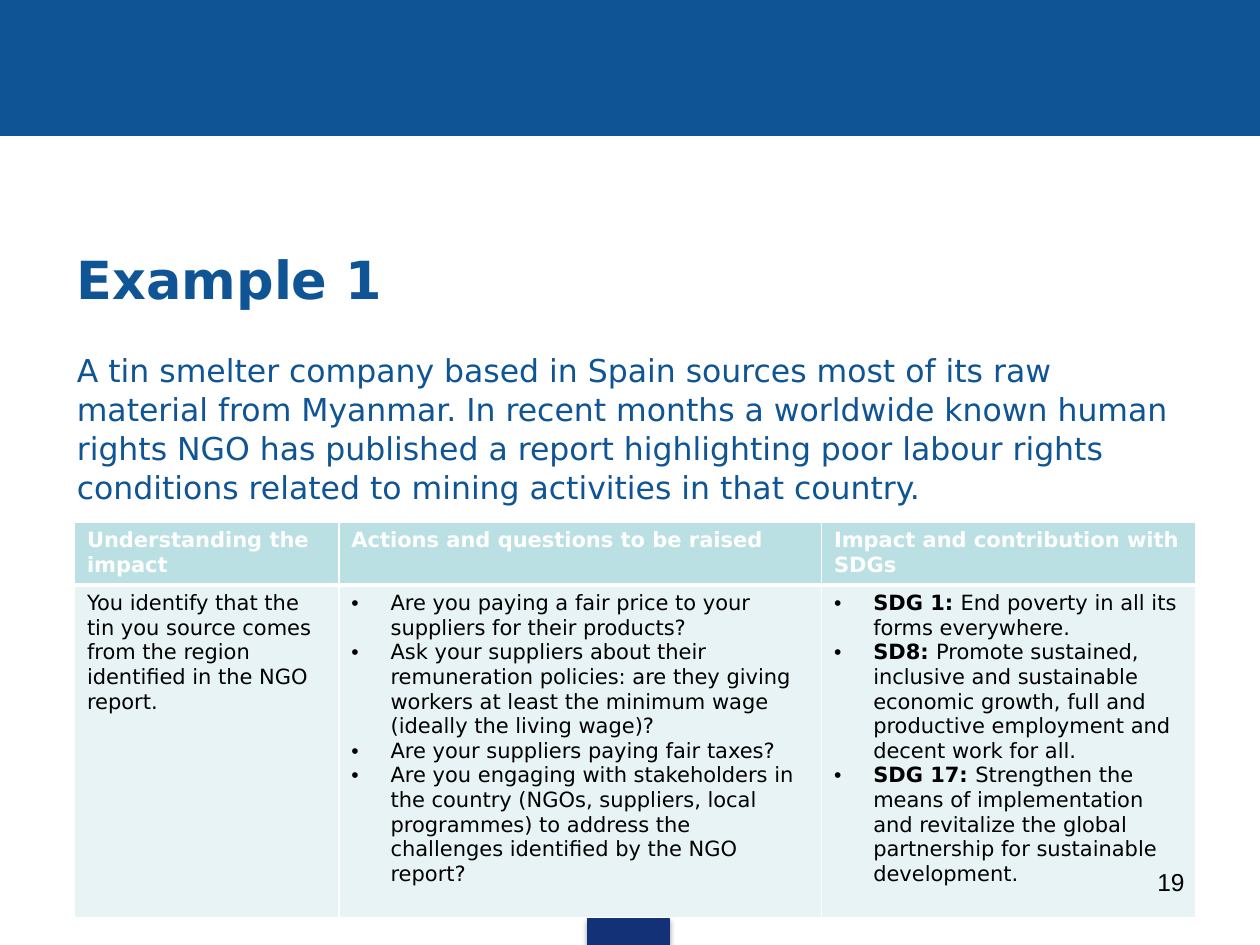
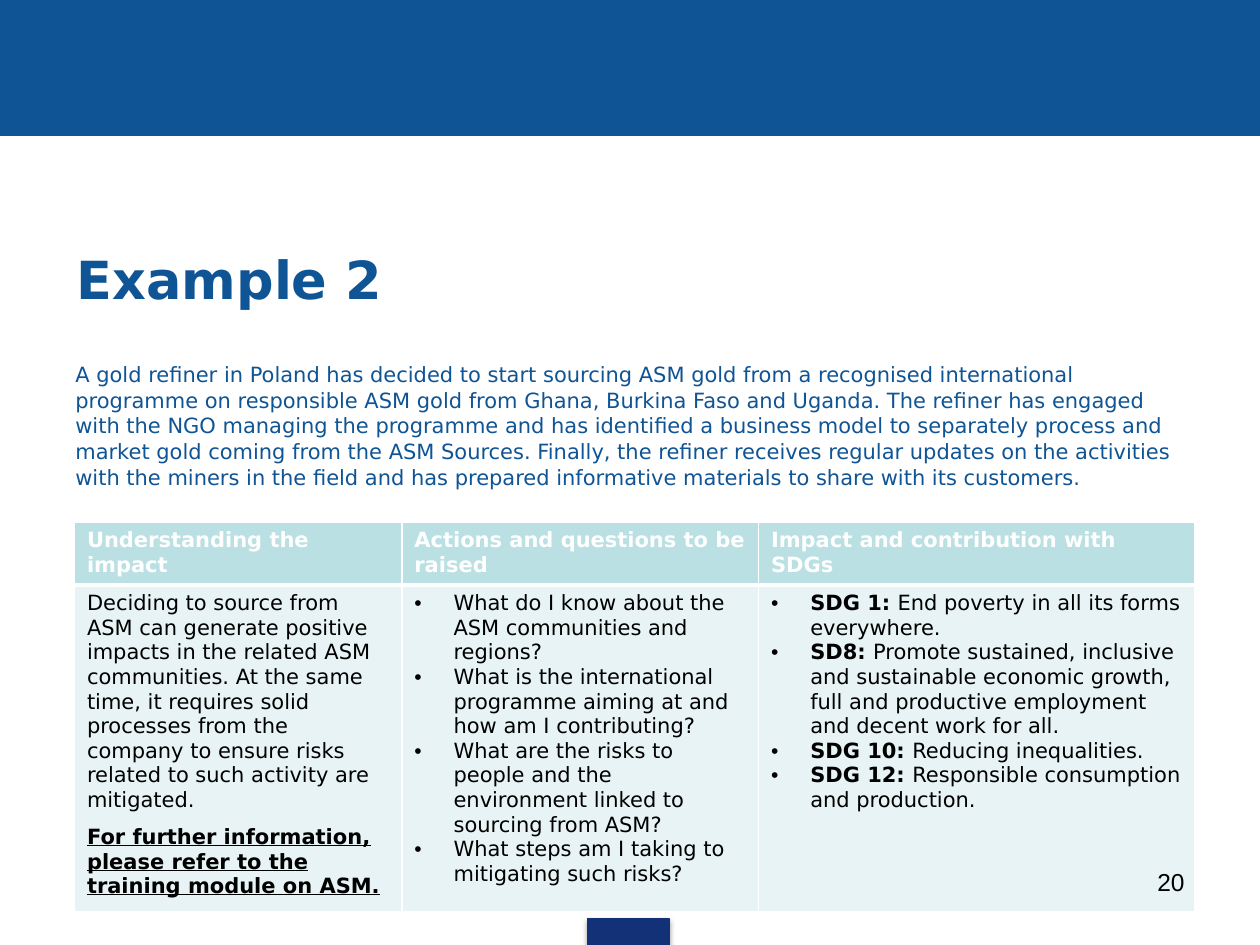
from dataclasses import dataclass

from lxml import etree
from pptx import Presentation
from pptx.dml.color import RGBColor
from pptx.enum.shapes import MSO_SHAPE
from pptx.enum.text import MSO_ANCHOR, PP_ALIGN
from pptx.oxml.ns import qn
from pptx.util import Cm, Pt

RECTANGLE = MSO_SHAPE.RECTANGLE
MIDDLE, TOP = MSO_ANCHOR.MIDDLE, MSO_ANCHOR.TOP
LEFT, RIGHT = PP_ALIGN.LEFT, PP_ALIGN.RIGHT


@dataclass(frozen=True)
class Theme:
    blue: str = "0F5494"
    navy: str = "133176"
    header_fill: str = "BBE0E3"
    body_fill: str = "E7F3F4"
    white: str = "FFFFFF"
    black: str = "000000"
    font: str = "DejaVu Sans"
    number_font: str = "Arial"
    title_size: float = 30
    number_size: float = 14
    table_size: float = 12
    thin_border: float = 1
    thick_border: float = 3


@dataclass
class Example:
    title: str
    page: str
    story: str
    story_size: float
    story_box: tuple
    column_widths: tuple
    answer_height: float
    impact: str
    further_reading: str
    questions: list
    goals: list


THEME = Theme()
SLIDE_WIDTH, SLIDE_HEIGHT = 25.4, 19.05
BAND_BOX = (0, 0, SLIDE_WIDTH, 2.74)
TAB_BOX = (11.84, 18.52, 1.65, 0.56)
TITLE_BOX = (1.3, 4.32, 22.86, 2.59)
NUMBER_BOX = (18.21, 17.35, 5.92, 1.31)
TABLE_LEFT, TABLE_TOP, HEADER_HEIGHT = 1.5, 10.52, 1.23
BULLET_INDENT = 0.79
HEADERS = (
    "Understanding the impact",
    "Actions and questions to be raised",
    "Impact and contribution with SDGs",
)
POVERTY = ("SDG 1:", "End poverty in all its forms everywhere.")
GROWTH = (
    "SD8:",
    "Promote sustained, inclusive and sustainable economic growth, "
    "full and productive employment and decent work for all.",
)

EXAMPLES = [
    Example(
        title="Example 1",
        page="19",
        story="A tin smelter company based in Spain sources most of its raw "
        "material from Myanmar. In recent months a worldwide known human "
        "rights NGO has published a report highlighting poor labour rights "
        "conditions related to mining activities in that country.",
        story_size=18,
        story_box=(1.3, 6.93, 22.86, 10.08),
        column_widths=(5.33, 9.73, 7.54),
        answer_height=6.7,
        impact="You identify that the tin you source comes from the region "
        "identified in the NGO report.",
        further_reading="",
        questions=[
            "Are you paying a fair price to your suppliers for their products?",
            "Ask your suppliers about their remuneration policies: are they "
            "giving workers at least the minimum wage (ideally the living wage)?",
            "Are your suppliers paying fair taxes?",
            "Are you engaging with stakeholders in the country (NGOs, suppliers, "
            "local programmes) to address the challenges identified by the NGO "
            "report?",
        ],
        goals=[
            POVERTY,
            GROWTH,
            ("SDG 17:", "Strengthen the means of implementation and revitalize "
             "the global partnership for sustainable development."),
        ],
    ),
    Example(
        title="Example 2",
        page="20",
        story="A gold refiner in Poland has decided to start sourcing ASM gold "
        "from a recognised international programme on responsible ASM gold from "
        "Ghana, Burkina Faso and Uganda. The refiner has engaged with the NGO "
        "managing the programme and has identified a business model to "
        "separately process and market gold coming from the ASM Sources. "
        "Finally, the refiner receives regular updates on the activities with "
        "the miners in the field and has prepared informative materials to "
        "share with its customers.",
        story_size=12,
        story_box=(1.27, 7.14, 22.86, 3.2),
        column_widths=(6.6, 7.19, 8.79),
        answer_height=6.43,
        impact="Deciding to source from ASM can generate positive impacts in "
        "the related ASM communities. At the same time, it requires solid "
        "processes from the company to ensure risks related to such activity "
        "are mitigated.",
        further_reading="For further information, please refer to the training "
        "module on ASM.",
        questions=[
            "What do I know about the ASM communities and regions?",
            "What is the international programme aiming at and how am I "
            "contributing?",
            "What are the risks to people and the environment linked to "
            "sourcing from ASM?",
            "What steps am I taking to mitigating such risks?",
        ],
        goals=[
            POVERTY,
            GROWTH,
            ("SDG 10:", "Reducing inequalities."),
            ("SDG 12:", "Responsible consumption and production."),
        ],
    ),
]


def color(value):
    return RGBColor.from_string(value)


def lengths(box):
    return [Cm(value) for value in box]


def style(paragraph, size, ink, bold=None, name=THEME.font):
    font = paragraph.font
    font.name, font.size, font.bold = name, Pt(size), bold
    font.color.rgb = color(ink)


def add_block(slide, box, fill):
    shape = slide.shapes.add_shape(RECTANGLE, *lengths(box))
    shape.shadow.inherit = False
    shape.fill.solid()
    shape.fill.fore_color.rgb = color(fill)
    shape.line.color.rgb = color(fill)
    shape.line.width = Pt(0.75)
    return shape


def add_drop_shadow(shape):
    effects = shape._element.spPr.find(qn("a:effectLst"))
    shadow = etree.SubElement(
        effects, qn("a:outerShdw"), blurRad=str(Pt(3.1)), dist=str(Pt(1.8)),
        dir="5400000", rotWithShape="0")
    ink = etree.SubElement(shadow, qn("a:srgbClr"), val=THEME.black)
    etree.SubElement(ink, qn("a:alpha"), val="35000")


def add_text(slide, box, text, anchor=TOP, align=LEFT, spacing=None, **look):
    frame = slide.shapes.add_textbox(*lengths(box)).text_frame
    frame.word_wrap = True
    frame.vertical_anchor = anchor
    paragraph = frame.paragraphs[0]
    paragraph.text = text
    paragraph.alignment = align
    paragraph.line_spacing = spacing
    style(paragraph, **look)


def set_borders(cell, top, bottom):
    """Draw white borders; they must come before the fill in the cell's XML."""
    properties = cell._tc.get_or_add_tcPr()
    widths = {"a:lnL": THEME.thin_border, "a:lnR": THEME.thin_border,
              "a:lnT": top, "a:lnB": bottom}
    for position, (tag, width) in enumerate(widths.items()):
        line = etree.Element(qn(tag), w=str(Pt(width)))
        fill = etree.SubElement(line, qn("a:solidFill"))
        etree.SubElement(fill, qn("a:srgbClr"), val=THEME.white)
        properties.insert(position, line)


def add_bullet(paragraph):
    indent = Cm(BULLET_INDENT)
    properties = paragraph._p.get_or_add_pPr()
    properties.set("marL", str(indent))
    properties.set("indent", str(-indent))
    etree.SubElement(properties, qn("a:buFont"), typeface=THEME.number_font)
    etree.SubElement(properties, qn("a:buChar"), char="•")


def add_paragraph(cell, ink=THEME.black, bold=None, bullet=False):
    """Return a styled paragraph, using the cell's empty first one if it is free."""
    frame = cell.text_frame
    first = frame.paragraphs[0]
    paragraph = frame.add_paragraph() if first.runs else first
    if bullet:
        add_bullet(paragraph)
    style(paragraph, THEME.table_size, ink, bold)
    return paragraph


def fill_impact(cell, example):
    add_paragraph(cell).add_run().text = example.impact
    if example.further_reading:
        paragraph = add_paragraph(cell, bold=True)
        paragraph.space_before = Pt(7)
        paragraph.font.underline = True
        paragraph.add_run().text = example.further_reading


def fill_questions(cell, example):
    for question in example.questions:
        add_paragraph(cell, bullet=True).add_run().text = question


def fill_goals(cell, example):
    for label, goal in example.goals:
        paragraph = add_paragraph(cell, bullet=True)
        label_run = paragraph.add_run()
        label_run.text = f"{label} "
        label_run.font.bold = True
        paragraph.add_run().text = goal


def add_impact_table(slide, example):
    heights = (HEADER_HEIGHT, example.answer_height)
    box = (TABLE_LEFT, TABLE_TOP, sum(example.column_widths), sum(heights))
    table = slide.shapes.add_table(2, len(HEADERS), *lengths(box)).table
    table.horz_banding = False
    for row, height in zip(table.rows, heights):
        row.height = Cm(height)
    for column, width in zip(table.columns, example.column_widths):
        column.width = Cm(width)

    fillers = (fill_impact, fill_questions, fill_goals)
    for index, (header, fill_answer) in enumerate(zip(HEADERS, fillers)):
        heading, answer = table.cell(0, index), table.cell(1, index)
        for cell, fill in ((heading, THEME.header_fill), (answer, THEME.body_fill)):
            cell.fill.solid()
            cell.fill.fore_color.rgb = color(fill)
        set_borders(heading, THEME.thin_border, THEME.thick_border)
        set_borders(answer, THEME.thick_border, THEME.thin_border)
        add_paragraph(heading, THEME.white, bold=True).add_run().text = header
        fill_answer(answer, example)


def add_frame(slide, title):
    """Draw the band, bottom tab and title that every slide shares."""
    add_block(slide, BAND_BOX, THEME.blue)
    add_drop_shadow(add_block(slide, TAB_BOX, THEME.navy))
    add_text(slide, TITLE_BOX, title, anchor=MIDDLE,
             size=THEME.title_size, ink=THEME.blue, bold=True)


def add_example_slide(presentation, example):
    slide = presentation.slides.add_slide(presentation.slide_layouts[6])
    add_frame(slide, example.title)
    add_text(slide, example.story_box, example.story, spacing=1.03,
             size=example.story_size, ink=THEME.blue)
    add_impact_table(slide, example)
    add_text(slide, NUMBER_BOX, example.page, align=RIGHT,
             size=THEME.number_size, ink=THEME.black, name=THEME.number_font)


def main():
    presentation = Presentation()
    presentation.slide_width = Cm(SLIDE_WIDTH)
    presentation.slide_height = Cm(SLIDE_HEIGHT)
    for example in EXAMPLES:
        add_example_slide(presentation, example)
    presentation.save("out.pptx")


if __name__ == "__main__":
    main()
